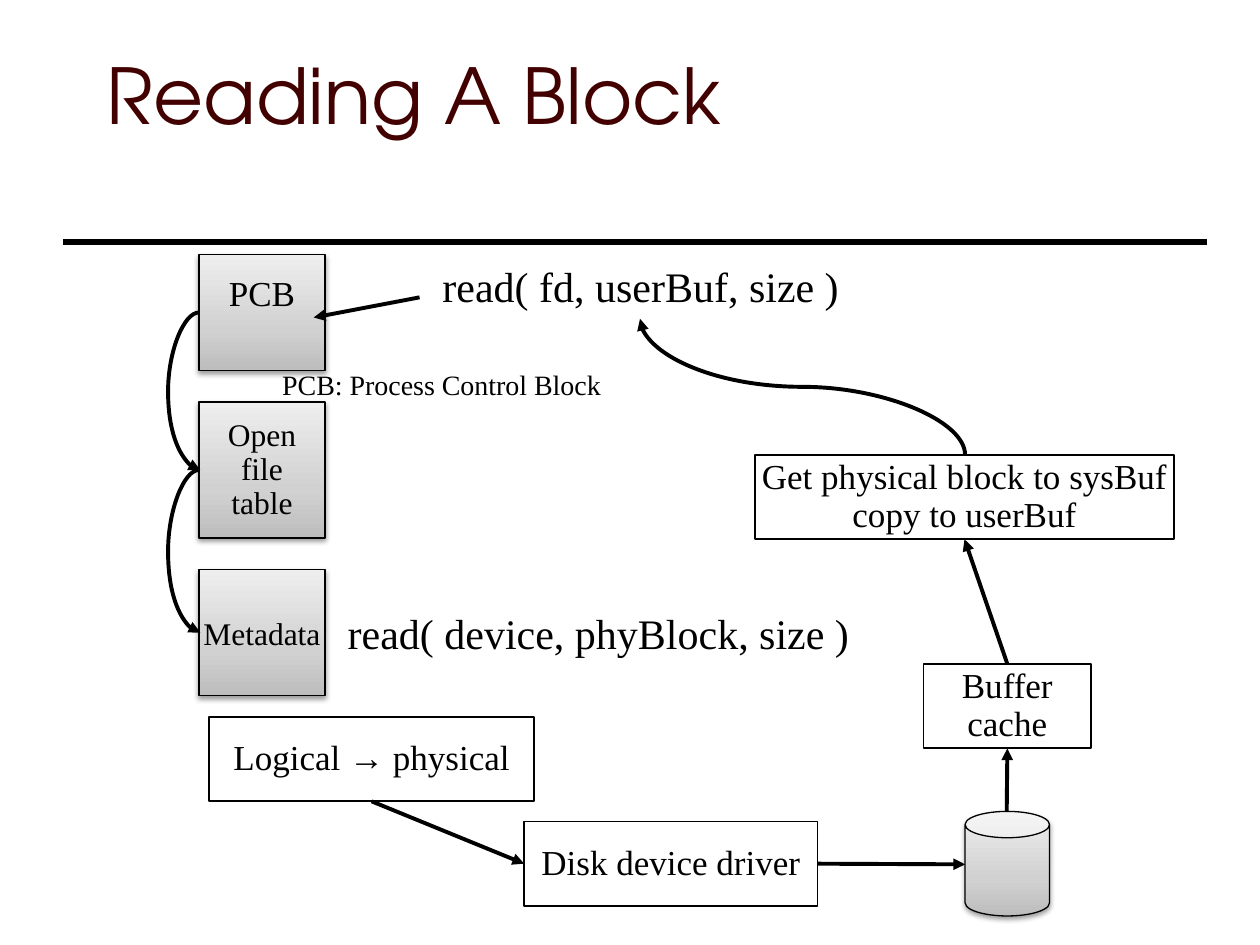
from copy import deepcopy

from lxml import etree
from pptx import Presentation
from pptx import util as u
from pptx.dml.color import RGBColor
from pptx.enum import shapes, text
from pptx.oxml.ns import qn

BLACK = RGBColor(0x00, 0x00, 0x00)
MAROON = RGBColor(0x42, 0x00, 0x00)
GRADIENT = (
    (0, RGBColor(0xBD, 0xBD, 0xBD)),
    (0.35, RGBColor(0xD1, 0xD1, 0xD1)),
    (1, RGBColor(0xEE, 0xEE, 0xEE)),
)
BODY_FONT = "Times New Roman"
TITLE_FONT = "TeX Gyre Adventor"


def inches(*lengths):
    return [u.Inches(length) for length in lengths]


def write(frame, words, size=20, font=BODY_FONT, color=BLACK, spacing=None,
          align=text.PP_ALIGN.CENTER, anchor=text.MSO_ANCHOR.MIDDLE, wrap=False):
    frame.word_wrap = wrap
    frame.vertical_anchor = anchor
    for index, line in enumerate(words.split("\n")):
        para = frame.add_paragraph() if index else frame.paragraphs[0]
        para.alignment = align
        para.line_spacing = spacing
        span = para.add_run()
        span.text = line
        span.font.size = u.Pt(size)
        span.font.name = font
        span.font.color.rgb = color


class Diagram:
    line_width = 2.25

    def __init__(self, slide):
        self.slide = slide

    def label(self, words, place, **style):
        box = self.slide.shapes.add_textbox(*inches(*place))
        style.setdefault("anchor", text.MSO_ANCHOR.TOP)
        write(box.text_frame, words, **style)
        return box

    def outline(self, kind, place, width):
        shape = self.slide.shapes.add_shape(kind, *inches(*place))
        shape.shadow.inherit = False
        shape.line.color.rgb = BLACK
        shape.line.width = u.Pt(width)
        return shape

    def step(self, words, place):
        box = self.outline(shapes.MSO_SHAPE.RECTANGLE, place, 1)
        box.fill.background()
        write(box.text_frame, words, spacing=0.9)
        return box

    def store(self, place, words="", kind=shapes.MSO_SHAPE.RECTANGLE, **style):
        shape = self.outline(kind, place, 0.75)
        shape.fill.gradient()
        shape.fill.gradient_angle = 90
        properties = shape._element.spPr
        stops = properties.find(".//" + qn("a:gsLst"))
        stops.append(deepcopy(stops[0]))
        for stop, (position, color) in zip(shape.fill.gradient_stops, GRADIENT):
            stop.position = position
            stop.color.rgb = color
        shadow = etree.SubElement(
            properties.find(qn("a:effectLst")), qn("a:outerShdw"),
            blurRad=str(u.Pt(3.1)), dist=str(u.Pt(1.6)), dir="5400000", rotWithShape="0")
        tint = etree.SubElement(shadow, qn("a:srgbClr"), val=str(BLACK))
        etree.SubElement(tint, qn("a:alpha"), val="38000")
        if words:
            write(shape.text_frame, words, **style)
        return shape

    def line(self, start, end, width=line_width, kind=shapes.MSO_CONNECTOR.STRAIGHT):
        line = self.slide.shapes.add_connector(kind, *inches(*start, *end))
        line.line.color.rgb = BLACK
        line.line.width = u.Pt(width)
        etree.SubElement(line._element.spPr, qn("a:effectLst"))
        return line

    def arrow(self, start, end, source=None, target=None, **style):
        arrow = self.line(start, end, **style)
        etree.SubElement(arrow.line._get_or_add_ln(), qn("a:tailEnd"), type="triangle")
        if source:
            arrow.begin_connect(*source)
        if target:
            arrow.end_connect(*target)
        return arrow

    def curve(self, start, end, bend, turn=0):
        curve = self.arrow(start, end, kind=shapes.MSO_CONNECTOR.CURVE)
        properties = curve._element.spPr
        properties.find(qn("a:xfrm")).set("rot", str(turn * 60000))
        guides = properties.find(qn("a:prstGeom")).find(qn("a:avLst"))
        etree.SubElement(guides, qn("a:gd"), name="adj1", fmla=f"val {round(bend * 100000)}")


def main():
    deck = Presentation()
    deck.slide_width, deck.slide_height = inches(10, 7.5)
    diagram = Diagram(deck.slides.add_slide(deck.slide_layouts[6]))

    diagram.line((9.58, 1.92), (0.5, 1.92), width=3)
    diagram.label("Reading A Block", (0.75, 0.33, 8.5, 0.83), size=44, font=TITLE_FONT,
                  color=MAROON, align=text.PP_ALIGN.LEFT,
                  anchor=text.MSO_ANCHOR.BOTTOM, wrap=True)

    control = diagram.store((1.58, 2.02, 1, 0.92), "PCB")
    control.text_frame.margin_bottom = u.Inches(0.36)
    diagram.store((1.58, 3.19, 1, 1.08), "Open\nfile\ntable", size=18, spacing=0.9)
    diagram.store((1.58, 4.52, 1, 1), "Metadata", size=18)
    disk = diagram.store((7.66, 6.44, 0.67, 0.83), kind=shapes.MSO_SHAPE.CAN)
    disk.adjustments[0] = 0.312

    logical = diagram.step("Logical → physical", (1.66, 5.69, 2.58, 0.67))
    copying = diagram.step("Get physical block to sysBuf\ncopy to userBuf",
                           (5.99, 3.61, 3.33, 0.67))
    driver = diagram.step("Disk device driver", (4.16, 6.52, 2.33, 0.67))
    cache = diagram.step("Buffer\ncache", (7.33, 5.27, 1.33, 0.67))

    for words, place, size in (
        ("read( fd, userBuf, size )", (3.41, 2.02, 3.35, 0.5), 24),
        ("read( device, phyBlock, size )", (2.66, 4.77, 4.18, 0.5), 24),
        ("PCB: Process Control Block", (2.12, 2.87, 2.77, 0.37), 16),
    ):
        diagram.label(words, place, size=size)

    diagram.arrow((3.33, 2.36), (2.49, 2.52))
    diagram.arrow((2.95, 6.36), (4.16, 6.86), source=(logical, 2), target=(driver, 1))
    diagram.arrow((6.49, 6.86), (7.66, 6.86), source=(driver, 3))
    diagram.arrow((7.99, 6.44), (7.99, 5.94), target=(cache, 2))
    diagram.arrow((7.99, 5.27), (7.66, 4.27), source=(cache, 0), target=(copying, 2))

    left, sliver, bulge = 1.58, 0.01, 0.25
    for top, bottom in ((2.48, 3.73), (3.73, 5.02)):
        diagram.curve((left, top), (left + sliver, bottom), bend=-bulge / sliver)
    diagram.curve((6.91, 1.78), (5.83, 4.36), bend=0.5, turn=90)

    deck.save("out.pptx")


if __name__ == "__main__":
    main()
